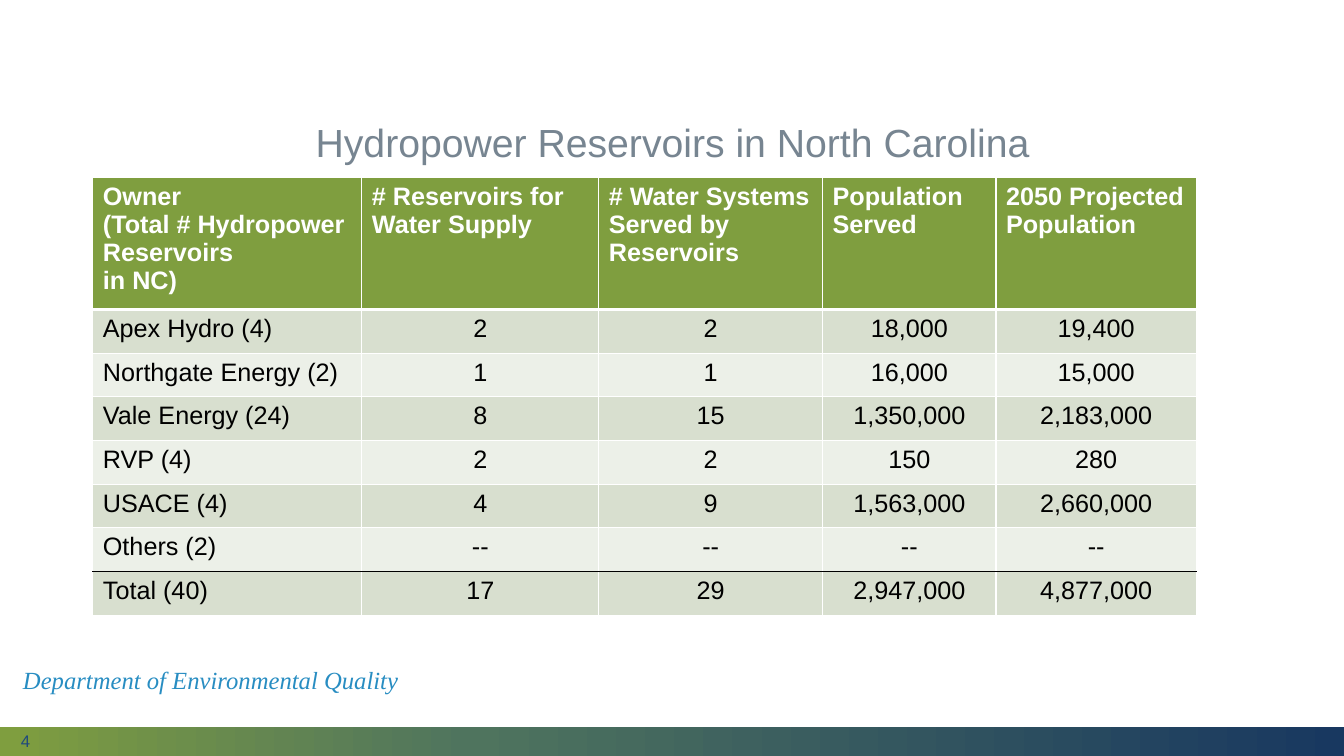
from pptx import Presentation
from pptx.dml.color import RGBColor
from pptx.enum.shapes import MSO_SHAPE
from pptx.enum.text import MSO_ANCHOR, PP_ALIGN
from pptx.oxml import parse_xml
from pptx.oxml.ns import nsdecls
from pptx.util import Cm, Pt

COLORS = {
    "green": "7F9E3F", "teal": "4F745E", "navy": "183860", "number": "1F497D",
    "blue": "288DC2", "slate": "778591", "white": "FFFFFF", "black": "000000",
    "dark_band": "D8DFCF", "light_band": "ECF0E8",
}
COL_WIDTHS = [6.78, 5.97, 5.64, 4.37, 5.05]
HEADER_HEIGHT, ROW_HEIGHT = 3.33, 1.1
ROWS = [
    ["Owner\n(Total # Hydropower Reservoirs\nin NC)", "# Reservoirs for Water Supply",
     "# Water Systems Served by Reservoirs", "Population Served", "2050 Projected Population"],
    ["Apex Hydro (4)", "2", "2", "18,000", "19,400"],
    ["Northgate Energy (2)", "1", "1", "16,000", "15,000"],
    ["Vale Energy (24)", "8", "15", "1,350,000", "2,183,000"],
    ["RVP (4)", "2", "2", "150", "280"],
    ["USACE (4)", "4", "9", "1,563,000", "2,660,000"],
    ["Others (2)", "--", "--", "--", "--"],
    ["Total (40)", "17", "29", "2,947,000", "4,877,000"],
]


def rgb(name):
    """Return the named colour."""
    return RGBColor.from_string(COLORS[name])


def style_text(tf, size, color, font="Arial", bold=False, italic=False, align=PP_ALIGN.LEFT):
    """Format every run of a text frame alike."""
    for p in tf.paragraphs:
        p.alignment = align
        for r in p.runs:
            r.font.name, r.font.size = font, Pt(size)
            r.font.bold, r.font.italic = bold, italic
            r.font.color.rgb = rgb(color)


def add_text(s, box, text, size, color, anchor=MSO_ANCHOR.MIDDLE, spacing=0.9, **style):
    """Add a wrapped text box."""
    tf = s.shapes.add_textbox(*map(Cm, box)).text_frame
    tf.word_wrap = True
    tf.vertical_anchor = anchor
    tf.text = text
    tf.paragraphs[0].line_spacing = spacing
    style_text(tf, size, color, **style)


def add_gradient_bar(s, box, stops):
    """Add a borderless bar with a left-to-right gradient."""
    sp = s.shapes.add_shape(MSO_SHAPE.RECTANGLE, *map(Cm, box))
    sp.shadow.inherit = False
    sp.line.fill.background()
    marks = "".join(f'<a:gs pos="{pos * 1000}"><a:srgbClr val="{COLORS[name]}"/></a:gs>'
                    for pos, name in stops)
    gradient = parse_xml(f'<a:gradFill {nsdecls("a")} rotWithShape="1"><a:gsLst>{marks}</a:gsLst>'
                         '<a:lin ang="0" scaled="0"/></a:gradFill>')
    sp._element.spPr.find("{*}prstGeom").addnext(gradient)


def set_borders(cell, top, bottom):
    """Draw white sides and the given top and bottom borders."""
    tcPr = cell._tc.get_or_add_tcPr()
    side = ("white", 1)
    for tag, (color, width) in zip(("lnL", "lnR", "lnT", "lnB"), (side, side, top, bottom)):
        tcPr.append(parse_xml(
            f'<a:{tag} {nsdecls("a")} w="{Pt(width)}"><a:solidFill>'
            f'<a:srgbClr val="{COLORS[color]}"/></a:solidFill></a:{tag}>'))


def add_reservoir_table(s, left, top):
    """Add the table with a green header, banded rows and a ruled total."""
    height = HEADER_HEIGHT + ROW_HEIGHT * (len(ROWS) - 1)
    table = s.shapes.add_table(len(ROWS), len(COL_WIDTHS), Cm(left), Cm(top),
                               Cm(sum(COL_WIDTHS)), Cm(height)).table
    table.first_row = table.horz_banding = False
    for col, width in zip(table.columns, COL_WIDTHS):
        col.width = Cm(width)
    rules = [("white", 1)] * (len(ROWS) + 1)
    rules[1], rules[-2] = ("white", 3), ("black", 1)
    for i, values in enumerate(ROWS):
        header = i == 0
        table.rows[i].height = Cm(HEADER_HEIGHT if header else ROW_HEIGHT)
        fill = "green" if header else "dark_band" if i % 2 else "light_band"
        for j, value in enumerate(values):
            cell = table.cell(i, j)
            cell.text = value
            set_borders(cell, rules[i], rules[i + 1])
            cell.fill.solid()
            cell.fill.fore_color.rgb = rgb(fill)
            style_text(cell.text_frame, 18, "white" if header else "black", bold=header,
                       align=PP_ALIGN.LEFT if header or j == 0 else PP_ALIGN.CENTER)


def main():
    """Build and save the slide."""
    prs = Presentation()
    prs.slide_width, prs.slide_height = Cm(33.87), Cm(19.05)
    s = prs.slides.add_slide(prs.slide_layouts[6])
    add_gradient_bar(s, (0, 18.31, 33.87, 0.74), [(0, "green"), (35, "teal"), (100, "navy")])
    add_text(s, (0.28, 18.47, 7.62, 0.38), "4", 12, "number", spacing=1.0)
    add_text(s, (0.33, 16.66, 10.41, 1.04), "Department of Environmental Quality", 17.6, "blue",
             font="Times New Roman", italic=True)
    add_text(s, (2.34, 3, 29.21, 13.94), "Hydropower Reservoirs in North Carolina", 28, "slate",
             anchor=MSO_ANCHOR.TOP, align=PP_ALIGN.CENTER)
    add_reservoir_table(s, 2.34, 4.47)
    prs.save("out.pptx")


if __name__ == "__main__":
    main()
